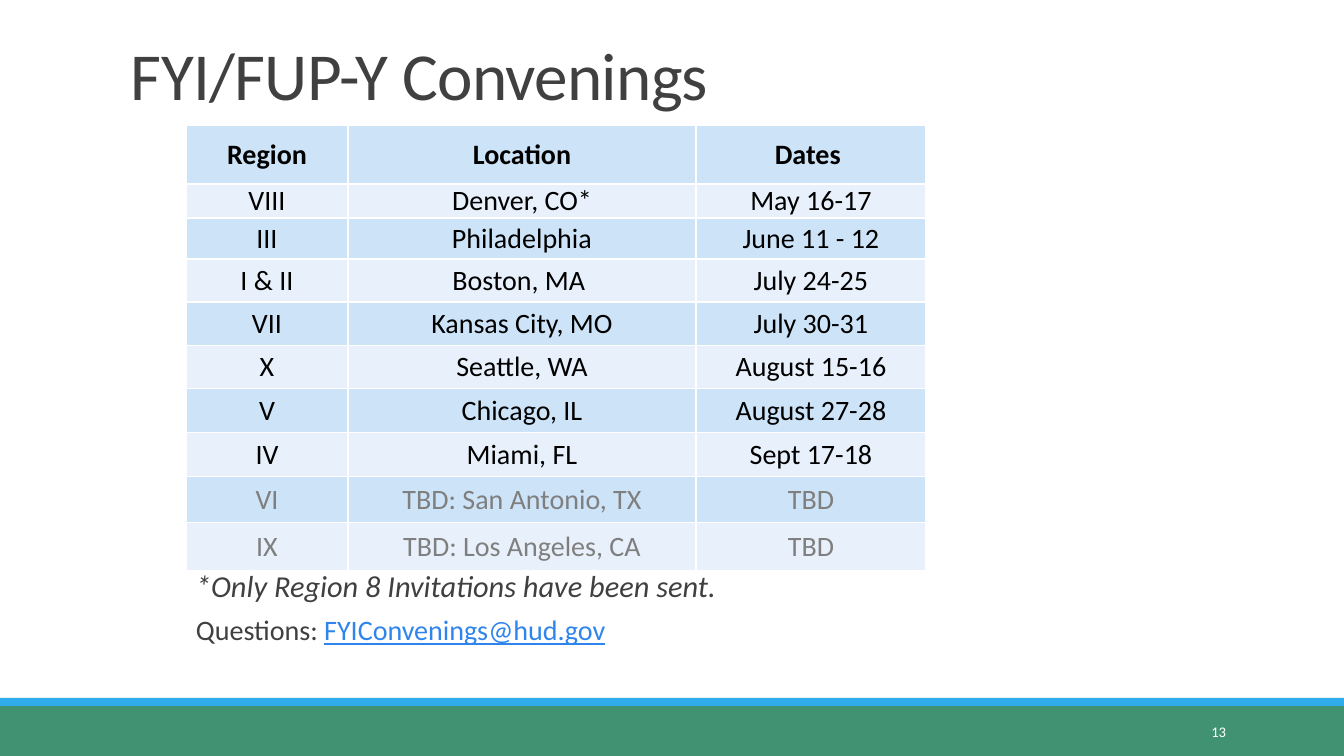
import pptx
import pptx.dml.color
import pptx.enum.shapes
import pptx.enum.text
import pptx.oxml
import pptx.oxml.ns
import pptx.util

ALIGN = pptx.enum.text.PP_ALIGN
ANCHOR = pptx.enum.text.MSO_ANCHOR
color = pptx.dml.color.RGBColor.from_string


def px(*lengths):
    """Turn pixels (100.8 to the inch) into a list of EMU lengths."""
    return [pptx.util.Emu(round(length * 914400 / 100.8)) for length in lengths]


def write(paragraph, text, size=20, fill="000000", bold=False, italic=False,
          underline=False, align=ALIGN.LEFT, line_spacing=None, tracking=None):
    """Add one formatted run to a paragraph."""
    paragraph.alignment = align
    if line_spacing:
        paragraph.line_spacing = line_spacing
    run = paragraph.add_run()
    run.text = text
    run.font.name = "Calibri"
    run.font.size = pptx.util.Pt(size)
    run.font.color.rgb = color(fill)
    run.font.bold = bold
    run.font.italic = italic
    run.font.underline = underline
    if tracking:
        run.font._element.set("spc", str(tracking))


presentation = pptx.Presentation()
presentation.slide_width, presentation.slide_height = px(1344, 756)
slide = presentation.slides.add_slide(presentation.slide_layouts[6])

# Footer bands
for top, height, fill in [(706, 50, "409273"), (698, 8, "30ACEC")]:
    band = slide.shapes.add_shape(
        pptx.enum.shapes.MSO_SHAPE.RECTANGLE, *px(0, top, 1344, height))
    band.shadow.inherit = False
    band.fill.solid()
    band.fill.fore_color.rgb = color(fill)
    band.line.fill.background()

# Title
title = slide.shapes.add_textbox(*px(121, 31, 1109, 88)).text_frame
title.word_wrap = True
title.vertical_anchor = ANCHOR.BOTTOM
write(title.paragraphs[0], "FYI/FUP-Y Convenings", size=48, fill="404040",
      line_spacing=0.85, tracking=-50)

# Notes under the table
notes = slide.shapes.add_textbox(*px(196, 572, 1148, 83)).text_frame
notes.word_wrap = True
notes.margin_left = notes.margin_right = 0
invitations = notes.paragraphs[0]
invitations.space_after = pptx.util.Pt(2)
write(invitations, "*Only Region 8 Invitations have been sent. ", size=21.7,
      fill="404040", italic=True, line_spacing=0.7)
questions = notes.add_paragraph()
questions.space_before = pptx.util.Pt(12)
questions.space_after = pptx.util.Pt(2)
write(questions, "Questions: ", size=20.1, fill="404040", line_spacing=0.7)
write(questions, "FYIConvenings@hud.gov", size=20.1, fill="3085ED",
      underline=True, line_spacing=0.7)

# Slide number
number = slide.shapes.add_textbox(*px(1092, 712, 144, 40)).text_frame
number.word_wrap = True
number.vertical_anchor = ANCHOR.MIDDLE
write(number.paragraphs[0], "13", size=10.5, fill="FFFFFF", align=ALIGN.RIGHT)

# Table of convenings
convenings = [
    ("Region", "Location", "Dates "),
    ("VIII", "Denver, CO*", "May 16-17"),
    ("III", "Philadelphia", "June 11 - 12"),
    ("I & II", "Boston, MA ", "July 24-25"),
    ("VII", "Kansas City, MO", "July 30-31"),
    ("X", "Seattle, WA", "August 15-16"),
    ("V", "Chicago, IL", "August 27-28"),
    ("IV", "Miami, FL", "Sept 17-18"),
    ("VI", "TBD: San Antonio, TX", "TBD"),
    ("IX", "TBD: Los Angeles, CA", "TBD"),
]
column_widths = px(162, 348, 230)
row_heights = px(59, 34, 41, 43, 44, 43, 44, 44, 46, 48)
table = slide.shapes.add_table(
    len(convenings), len(column_widths), *px(186, 125, 740, 446)).table
for column, width in zip(table.columns, column_widths):
    column.width = width
for row, height in zip(table.rows, row_heights):
    row.height = height

for row_index, convening in enumerate(convenings):
    undecided = convening[2] == "TBD"
    for column_index, text in enumerate(convening):
        cell = table.cell(row_index, column_index)
        cell.margin_left = cell.margin_right = 0
        cell.margin_top = cell.margin_bottom = 0
        cell.vertical_anchor = ANCHOR.MIDDLE
        properties = cell._tc.get_or_add_tcPr()
        for side in "LRTB":
            properties.append(pptx.oxml.parse_xml(
                f'<a:ln{side} {pptx.oxml.ns.nsdecls("a")} w="12700"><a:solidFill>'
                f'<a:srgbClr val="FFFFFF"/></a:solidFill></a:ln{side}>'))
        cell.fill.solid()
        cell.fill.fore_color.rgb = color("E8F1FB" if row_index % 2 else "CDE3F8")
        write(cell.text_frame.paragraphs[0], text, bold=row_index == 0,
              fill="7F7F7F" if undecided else "000000", align=ALIGN.CENTER)

presentation.save("out.pptx")
